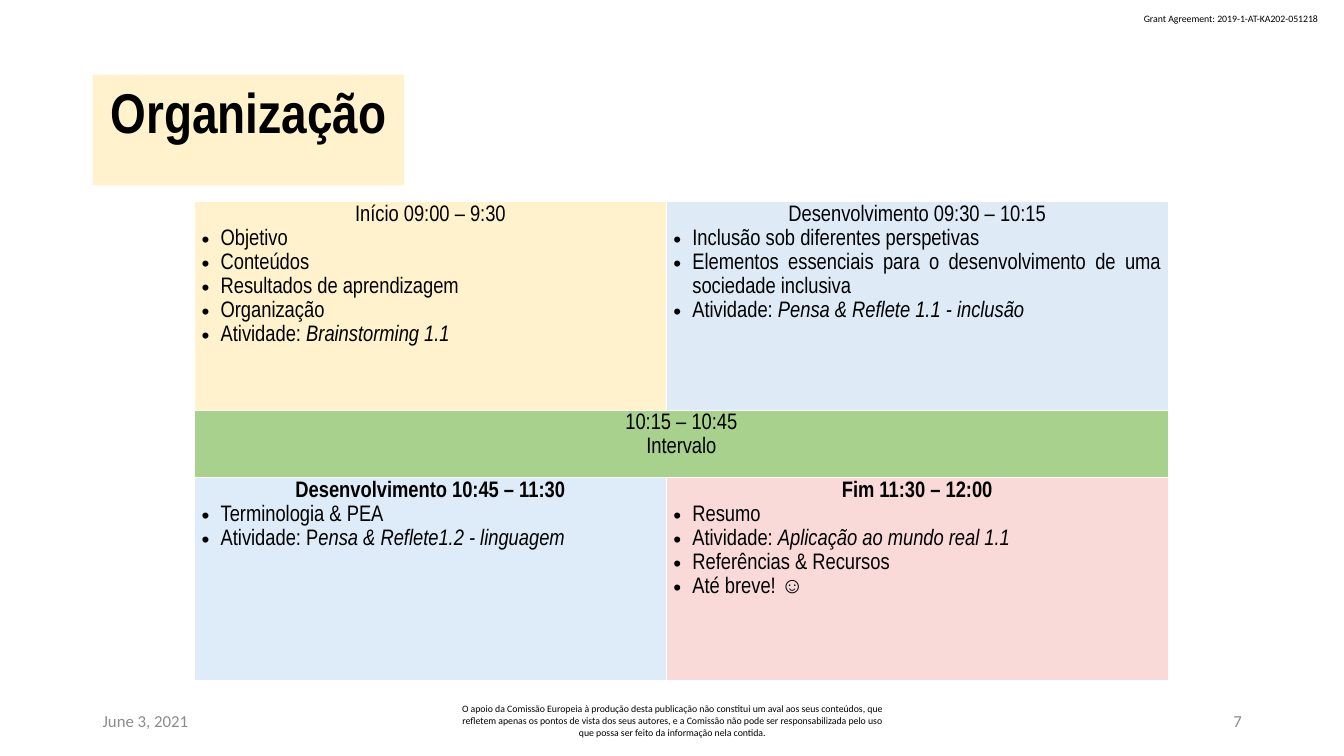
from dataclasses import dataclass
from typing import Any

from pptx import Presentation
from pptx.dml.color import RGBColor
from pptx.enum.text import MSO_ANCHOR as Anchor, MSO_AUTO_SIZE as AutoSize, PP_ALIGN as Align
from pptx.oxml.ns import qn
from pptx.slide import Slide
from pptx.table import _Cell as Cell
from pptx.text.text import TextFrame, _Paragraph as Paragraph
from pptx.util import Pt
from lxml.etree import SubElement

BLACK = RGBColor(0x00, 0x00, 0x00)
WHITE = RGBColor(0xFF, 0xFF, 0xFF)
GRAY = RGBColor(0x8C, 0x8C, 0x8C)
CREAM = RGBColor(0xFF, 0xF2, 0xCC)
BLUE = RGBColor(0xDE, 0xEB, 0xF7)
PALE_BLUE = RGBColor(0xDE, 0xEB, 0xF8)
GREEN = RGBColor(0xA9, 0xD1, 0x8E)
PINK = RGBColor(0xF9, 0xDA, 0xD9)

NARROW, CALIBRI = "Arial Narrow", "Calibri"
COLUMN_WIDTHS = (336.96, 358.56)
ROW_HEIGHTS = (149.04, 48.24, 144.72)
BULLET_INDENT = 13.68


@dataclass
class Item:
    text: str
    italic: str = ""


@dataclass
class Session:
    row: int
    column: int
    fill: RGBColor
    headings: list[str]
    items: list[Item]
    bold: bool = False
    align: Align = Align.LEFT


@dataclass
class Label:
    text: str
    left: float
    top: float
    width: float
    height: float
    size: float
    color: RGBColor
    align: Align = Align.LEFT
    anchor: Anchor = Anchor.MIDDLE


SESSIONS = [
    Session(0, 0, CREAM, ["Início 09:00 – 9:30"], [
        Item("Objetivo"), Item("Conteúdos"), Item("Resultados de aprendizagem"),
        Item("Organização"), Item("Atividade: ", "Brainstorming 1.1")]),
    Session(0, 1, BLUE, ["Desenvolvimento 09:30 – 10:15"], [
        Item("Inclusão sob diferentes perspetivas"),
        Item("Elementos essenciais para o desenvolvimento de uma sociedade inclusiva"),
        Item("Atividade: ", "Pensa & Reflete 1.1 - inclusão")], align=Align.JUSTIFY),
    Session(1, 0, GREEN, ["10:15 – 10:45", "Intervalo"], []),
    Session(2, 0, PALE_BLUE, ["Desenvolvimento 10:45 – 11:30"], [
        Item("Terminologia & PEA"),
        Item("Atividade: P", "ensa & Reflete1.2 - linguagem")],
        bold=True, align=Align.JUSTIFY),
    Session(2, 1, PINK, ["Fim 11:30 – 12:00"], [
        Item("Resumo"), Item("Atividade: ", "Aplicação ao mundo real 1.1"),
        Item("Referências & Recursos"), Item("Até breve! ☺")], bold=True),
]

LABELS = [
    Label("Grant Agreement: 2019-1-AT-KA202-051218", 810, 5.76, 141.84, 15.84, 7, BLACK,
          anchor=Anchor.TOP),
    Label("June 3, 2021", 66.24, 500.4, 216, 28.8, 12, GRAY),
    Label("O apoio da Comissão Europeia à produção desta publicação não constitui um aval "
          "aos seus conteúdos, que refletem apenas os pontos de vista dos seus autores, e a "
          "Comissão não pode ser responsabilizada pelo uso que possa ser feito da informação "
          "nela contida.", 318.24, 500.4, 324, 28.8, 7, BLACK, Align.CENTER),
    Label("7", 678.24, 500.4, 216, 28.8, 12, GRAY, Align.RIGHT),
]


def apply(target: Any, values: dict[str, Any]) -> None:
    for name, value in values.items():
        setattr(target, name, value)


def add_span(para: Paragraph, text: str, font: str, size: float,
             color: RGBColor = BLACK, bold: bool = False, italic: bool = False) -> None:
    span = para.add_run()
    span.text = text
    apply(span.font, {"name": font, "size": Pt(size), "bold": bold, "italic": italic})
    span.font.color.rgb = color


def next_para(frame: TextFrame, index: int) -> Paragraph:
    return frame.paragraphs[0] if index == 0 else frame.add_paragraph()


def add_bullet(para: Paragraph) -> None:
    properties = para._p.get_or_add_pPr()
    properties.set("marL", str(Pt(BULLET_INDENT)))
    properties.set("indent", str(-Pt(BULLET_INDENT)))
    SubElement(properties, qn("a:buFont")).set("typeface", "Arial")
    SubElement(properties, qn("a:buChar")).set("char", "•")


def add_borders(cell: Cell) -> None:
    properties = cell._tc.get_or_add_tcPr()
    for position, side in enumerate(("a:lnL", "a:lnR", "a:lnT", "a:lnB")):
        line = properties.makeelement(qn(side), {"w": str(Pt(1))})
        fill = SubElement(line, qn("a:solidFill"))
        SubElement(fill, qn("a:srgbClr")).set("val", str(WHITE))
        properties.insert(position, line)


def fill_session(cell: Cell, session: Session) -> None:
    cell.fill.solid()
    cell.fill.fore_color.rgb = session.fill
    frame = cell.text_frame
    for index, heading in enumerate(session.headings):
        para = next_para(frame, index)
        apply(para, {"alignment": Align.CENTER, "line_spacing": 1.15})
        add_span(para, heading, NARROW, 16, bold=session.bold)
    for item in session.items:
        para = frame.add_paragraph()
        add_bullet(para)
        apply(para, {"alignment": session.align, "line_spacing": 1.15})
        add_span(para, item.text, NARROW, 16)
        if item.italic:
            add_span(para, item.italic, NARROW, 16, italic=True)


def add_title(page: Slide) -> None:
    title = page.shapes.title
    apply(title, {"left": Pt(66.24), "top": Pt(53.28), "width": Pt(222.48), "height": Pt(79.2)})
    title.fill.solid()
    title.fill.fore_color.rgb = CREAM
    frame = title.text_frame
    apply(frame, {"auto_size": AutoSize.NONE, "word_wrap": True,
                  "vertical_anchor": Anchor.TOP, "margin_left": Pt(9.36),
                  "margin_right": Pt(9.36), "margin_top": Pt(2), "margin_bottom": Pt(5)})
    para = frame.paragraphs[0]
    apply(para, {"alignment": Align.CENTER, "line_spacing": 1.0})
    add_span(para, "Organização", NARROW, 40, bold=True)


def add_schedule(page: Slide) -> None:
    table = page.shapes.add_table(
        len(ROW_HEIGHTS), len(COLUMN_WIDTHS), Pt(138.96), Pt(144),
        Pt(sum(COLUMN_WIDTHS)), Pt(sum(ROW_HEIGHTS))).table
    apply(table, {"first_row": False, "horz_banding": False})
    for column, width in zip(table.columns, COLUMN_WIDTHS):
        column.width = Pt(width)
    for row, height in zip(table.rows, ROW_HEIGHTS):
        row.height = Pt(height)
    table.cell(1, 0).merge(table.cell(1, 1))
    for session in SESSIONS:
        fill_session(table.cell(session.row, session.column), session)
    for cell in table.iter_cells():
        apply(cell, {"margin_left": Pt(5), "margin_right": Pt(5), "margin_top": Pt(0),
                     "margin_bottom": Pt(0), "vertical_anchor": Anchor.TOP})
        add_borders(cell)


def add_label(page: Slide, label: Label) -> None:
    box = page.shapes.add_textbox(Pt(label.left), Pt(label.top), Pt(label.width), Pt(label.height))
    apply(box.text_frame, {"word_wrap": True, "vertical_anchor": label.anchor})
    para = box.text_frame.paragraphs[0]
    para.alignment = label.align
    add_span(para, label.text, CALIBRI, label.size, label.color)


def main() -> None:
    deck = Presentation()
    apply(deck, {"slide_width": Pt(960), "slide_height": Pt(540)})
    page = deck.slides.add_slide(deck.slide_layouts[5])
    # Grant line and footer
    for label in LABELS:
        add_label(page, label)
    # Heading and timetable
    add_title(page)
    add_schedule(page)
    deck.save("out.pptx")


if __name__ == "__main__":
    main()
